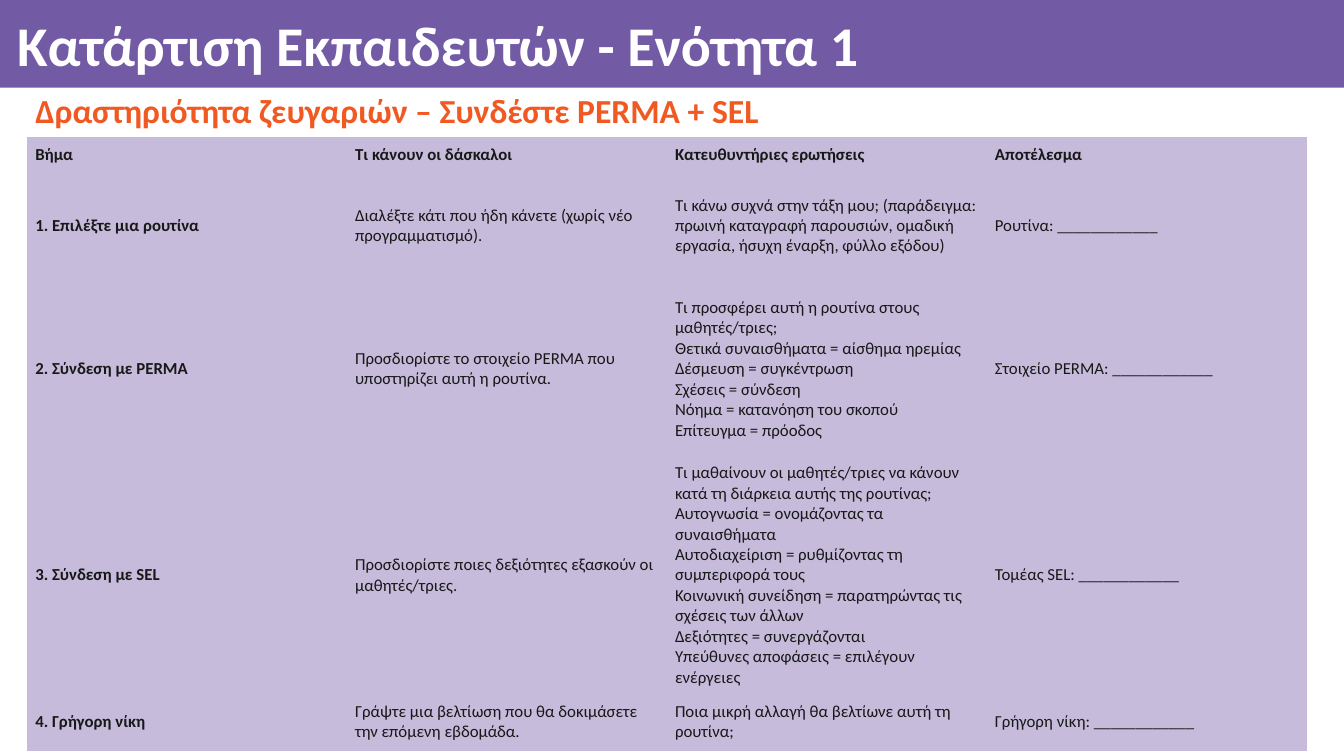
from lxml import etree
from pptx import Presentation
from pptx.dml.color import RGBColor
from pptx.enum.shapes import MSO_SHAPE
from pptx.enum.text import MSO_ANCHOR, MSO_AUTO_SIZE, PP_ALIGN
from pptx.oxml.ns import qn
from pptx.util import Inches, Pt

RECT = MSO_SHAPE.RECTANGLE
MIDDLE = MSO_ANCHOR.MIDDLE
NO_FIT = MSO_AUTO_SIZE.NONE
LEFT, JUSTIFY = PP_ALIGN.LEFT, PP_ALIGN.JUSTIFY

FONT = "Calibri"
COLORS = {
    "band": "735AA5",
    "title": "FFFFFF",
    "head": "F05A22",
    "text": "181818",
    "cell": "C6BBDB",
}
PLAIN_STYLE = "{2D5ABB26-0587-4C30-8999-92F81FD0307C}"

TITLE = "Κατάρτιση Εκπαιδευτών - Ενότητα 1"
HEAD = "Δραστηριότητα ζευγαριών – Συνδέστε PERMA + SEL"
BLANK = "_" * 12
HEIGHTS = [0.35, 1.06, 1.78, 2.04, 0.59]
# Each cell is a list of paragraphs
STEPS = [
    [["Βήμα"], ["Τι κάνουν οι δάσκαλοι"], ["Κατευθυντήριες ερωτήσεις"], ["Αποτέλεσμα"]],
    [
        ["1. Επιλέξτε μια ρουτίνα"],
        ["Διαλέξτε κάτι που ήδη κάνετε (χωρίς νέο προγραμματισμό)."],
        ["Τι κάνω συχνά στην τάξη μου; (παράδειγμα: πρωινή καταγραφή παρουσιών, "
         "ομαδική εργασία, ήσυχη έναρξη, φύλλο εξόδου)"],
        [f"Ρουτίνα: {BLANK}"],
    ],
    [
        ["2. Σύνδεση με PERMA"],
        ["Προσδιορίστε το στοιχείο PERMA που υποστηρίζει αυτή η ρουτίνα."],
        [
            "Τι προσφέρει αυτή η ρουτίνα στους μαθητές/τριες;",
            "Θετικά συναισθήματα = αίσθημα ηρεμίας",
            "Δέσμευση = συγκέντρωση",
            "Σχέσεις = σύνδεση",
            "Νόημα = κατανόηση του σκοπού",
            "Επίτευγμα = πρόοδος",
        ],
        [f"Στοιχείο PERMA: {BLANK}"],
    ],
    [
        ["3. Σύνδεση με SEL"],
        ["Προσδιορίστε ποιες δεξιότητες εξασκούν οι μαθητές/τριες."],
        [
            "Τι μαθαίνουν οι μαθητές/τριες να κάνουν κατά τη διάρκεια αυτής της ρουτίνας;",
            "Αυτογνωσία = ονομάζοντας τα συναισθήματα",
            "Αυτοδιαχείριση = ρυθμίζοντας τη συμπεριφορά τους",
            "Κοινωνική συνείδηση = παρατηρώντας τις σχέσεις των άλλων",
            "Δεξιότητες = συνεργάζονται",
            "Υπεύθυνες αποφάσεις = επιλέγουν ενέργειες",
        ],
        [f"Τομέας SEL: {BLANK}"],
    ],
    [
        ["4. Γρήγορη νίκη"],
        ["Γράψτε μια βελτίωση που θα δοκιμάσετε την επόμενη εβδομάδα."],
        ["Ποια μικρή αλλαγή θα βελτίωνε αυτή τη ρουτίνα;"],
        [f"Γρήγορη νίκη: {BLANK}"],
    ],
]


def paint(fill, color):
    fill.solid()
    fill.fore_color.rgb = RGBColor.from_string(COLORS[color])


def add_run(para, text, size, color, bold):
    run = para.add_run()
    run.text = text
    font = run.font
    font.name, font.size, font.bold = FONT, Pt(size), bold
    font.color.rgb = RGBColor.from_string(COLORS[color])


def add_band(slide):
    band = slide.shapes.add_shape(RECT, 0, 0, Inches(13.33), Inches(0.87))
    band.shadow.inherit = False
    paint(band.fill, "band")
    band.line.fill.background()
    # Send behind the placeholders
    slide.shapes._spTree.insert(2, band._element)


def fill_holder(holder, box, pads, text, size, color, align):
    holder.left, holder.top, holder.width, holder.height = map(Inches, box)
    frame = holder.text_frame
    frame.auto_size = NO_FIT
    frame.word_wrap = True
    frame.vertical_anchor = MIDDLE
    frame.margin_left = frame.margin_right = Inches(pads[0])
    frame.margin_top = frame.margin_bottom = Inches(pads[1])
    para = frame.paragraphs[0]
    para.alignment = align
    para.line_spacing = 0.9
    add_run(para, text, size, color, True)
    return para


def indent(para, left, first):
    para.space_before = Pt(10)
    props = para._p.get_or_add_pPr()
    props.set("marL", str(Inches(left)))
    props.set("indent", str(Inches(first)))
    etree.SubElement(props, qn("a:buNone"))


def fill_cell(cell, lines, bold):
    paint(cell.fill, "cell")
    cell.vertical_anchor = MIDDLE
    cell.margin_left = cell.margin_right = Inches(0.08)
    cell.margin_top = cell.margin_bottom = Inches(0.04)
    frame = cell.text_frame
    for i, line in enumerate(lines):
        para = frame.add_paragraph() if i else frame.paragraphs[0]
        add_run(para, line, 12, "text", bold)


def add_steps(slide):
    shape = slide.shapes.add_table(
        len(STEPS), len(STEPS[0]),
        Inches(0.27), Inches(1.36), Inches(12.69), Inches(sum(HEIGHTS)))
    shape._element.xpath(".//a:tableStyleId")[0].text = PLAIN_STYLE
    table = shape.table
    table.horz_banding = False
    for r, (row, height) in enumerate(zip(STEPS, HEIGHTS)):
        table.rows[r].height = Inches(height)
        for c, lines in enumerate(row):
            fill_cell(table.cell(r, c), lines, r == 0 or c == 0)


def main():
    prs = Presentation()
    prs.slide_width, prs.slide_height = Inches(13.33), Inches(7.5)
    slide = prs.slides.add_slide(prs.slide_layouts[1])

    # Title band and headings
    add_band(slide)
    fill_holder(slide.shapes.title, (0.11, 0.09, 13.06, 0.78), (0.06, 0.06),
                TITLE, 40, "title", LEFT)
    head = fill_holder(slide.placeholders[1], (0, 0.82, 13.06, 0.6), (0.1, 0.05),
                       HEAD, 24, "head", JUSTIFY)
    indent(head, 0.5, -0.25)

    # Activity table
    add_steps(slide)
    prs.save("out.pptx")


if __name__ == "__main__":
    main()
